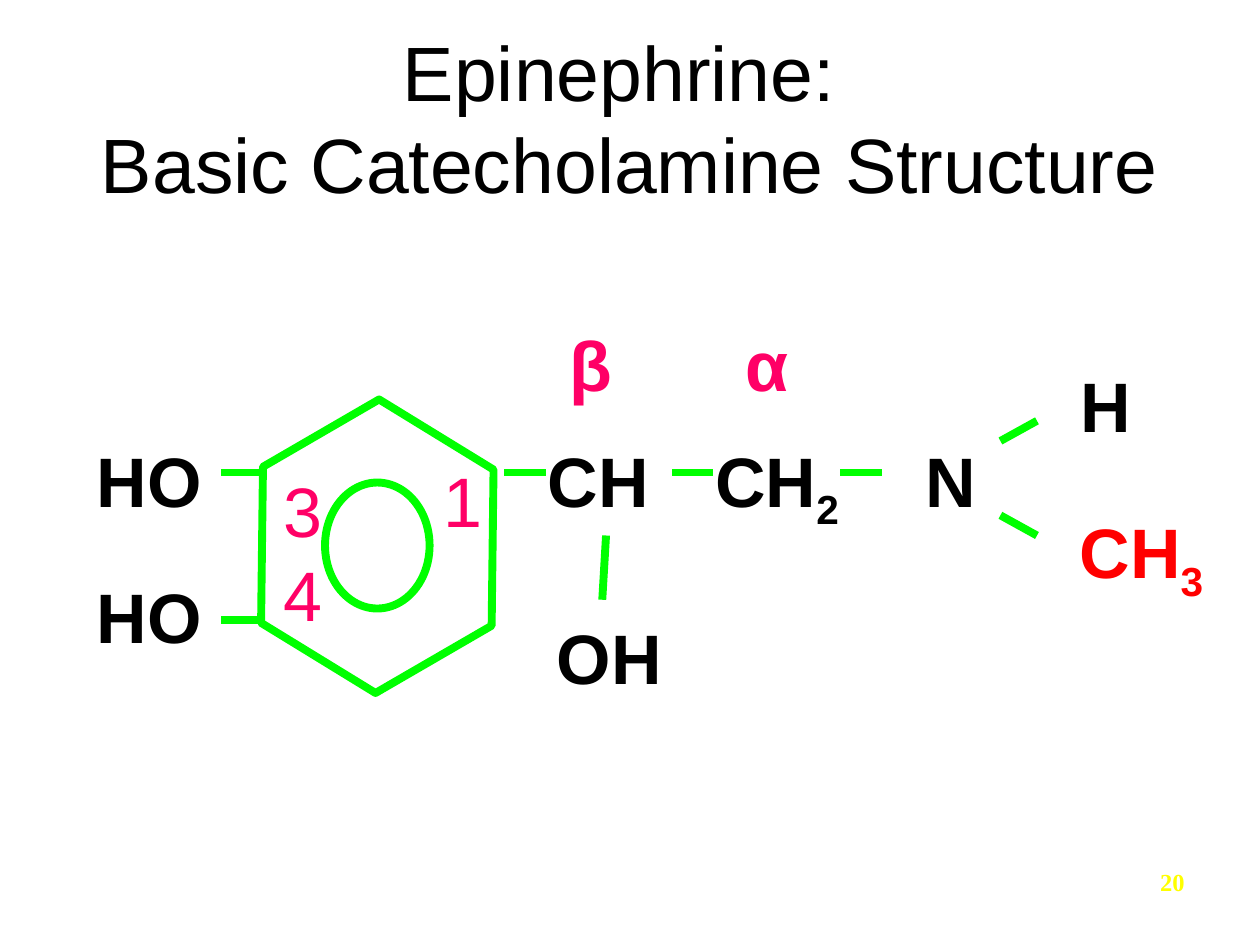
from pptx import Presentation
from pptx.dml.color import RGBColor
from pptx.enum import shapes, text
from pptx.oxml.ns import qn
from pptx.util import Inches, Pt
from lxml import etree

BLACK, RED, PINK, GREEN, YELLOW = "000000", "FF0000", "FF0066", "00FF00", "FFFF00"
ROW_Y, GREEK_Y, BOND_Y = 3.42, 2.5, 3.75
LABEL_H, BOND_W = 0.77, 0.33

TITLE = "Epinephrine: \vBasic Catecholamine Structure"
ATOMS = [
    ("HO", "", 0.67, ROW_Y, 1.03, BLACK),
    ("HO", "", 0.67, 4.5, 1.03, BLACK),
    ("CH", "", 4.25, ROW_Y, 1, BLACK),
    ("CH", "2", 5.58, ROW_Y, 1.21, BLACK),
    ("N", "", 7.25, ROW_Y, 0.6, BLACK),
    ("H", "", 8.48, 2.83, 0.6, BLACK),
    ("CH", "3", 8.47, 3.99, 1.22, RED),
    ("OH", "", 4.32, 4.83, 1.03, BLACK),
    ("β", "", 4.42, GREEK_Y, 0.51, PINK),
    ("α", "", 5.82, GREEK_Y, 0.56, PINK),
]
RING_NUMBERS = [("1", 3.42, 3.58), ("3", 2.15, 3.66), ("4", 2.15, 4.33)]
FLAT_BONDS = [(1.75, BOND_Y), (1.75, 4.92), (4, BOND_Y), (5.33, BOND_Y), (6.67, BOND_Y)]
SLANTED_BONDS = [
    (8.23, 3.34, 7.94, 3.5),
    (8.23, 4.25, 7.94, 4.09),
    (4.81, 4.25, 4.78, 4.76),
]
RING = [
    (shapes.MSO_SHAPE.HEXAGON, (1.83, 3.42, 2.33, 1.83), 270.7, (0.298, 1.155)),
    (shapes.MSO_SHAPE.OVAL, (2.58, 3.83, 0.83, 1), 0, ()),
]


def color(value):
    return RGBColor.from_string(value)


def add_text(s, box, runs, align=text.PP_ALIGN.LEFT, **frame):
    tf = s.shapes.add_textbox(*map(Inches, box)).text_frame
    for name, value in frame.items():
        setattr(tf, name, value)
    p = tf.paragraphs[0]
    p.alignment = align
    for content, fmt, hue, baseline in runs:
        p.add_run().text = content
        r = p.runs[-1]
        for name, value in fmt.items():
            setattr(r.font, name, value)
        r.font.color.rgb = color(hue)
        if baseline:
            r.font._element.set("baseline", str(baseline))


def add_label(s, content, subscript, x, y, w, hue, bold=True):
    fmt = {"name": "Arial", "size": Pt(40), "bold": bold}
    runs = [(content, fmt, hue, 0)]
    if subscript:
        runs.append((subscript, fmt, hue, -25000))
    add_text(s, (x, y, w, LABEL_H), runs, word_wrap=False,
             auto_size=text.MSO_AUTO_SIZE.SHAPE_TO_FIT_TEXT)


def style_line(shape):
    shape.line.color.rgb = color(GREEN)
    shape.line.width = Pt(4.5)


def add_bond(s, *ends):
    bond = s.shapes.add_connector(shapes.MSO_CONNECTOR.STRAIGHT, *map(Inches, ends))
    style_line(bond)
    etree.SubElement(bond._element.spPr, qn("a:effectLst"))


def add_ring_part(s, kind, box, rotation, adjustments):
    sp = s.shapes.add_shape(kind, *map(Inches, box))
    sp.rotation = rotation
    for i, value in enumerate(adjustments):
        sp.adjustments[i] = value
    sp.shadow.inherit = False
    sp.fill.background()
    style_line(sp)


def main():
    prs = Presentation()
    prs.slide_width, prs.slide_height = Inches(10), Inches(7.5)
    s = prs.slides.add_slide(prs.slide_layouts[6])

    number_format = {"name": "Times New Roman", "size": Pt(14), "bold": True}
    add_text(s, (7.17, 6.83, 2.33, 0.52), [("20", number_format, YELLOW, 0)],
             text.PP_ALIGN.RIGHT, word_wrap=True)

    title = s.shapes.add_textbox(*map(Inches, (0.5, 0.3, 9, 1.25)))
    tf = title.text_frame
    tf.word_wrap = True
    tf.vertical_anchor = text.MSO_ANCHOR.MIDDLE
    tf.text = TITLE
    p = tf.paragraphs[0]
    p.alignment = text.PP_ALIGN.CENTER
    for r in p.runs:
        r.font.name, r.font.size = "Arial", Pt(44)
        r.font.color.rgb = color(BLACK)

    for part in RING:
        add_ring_part(s, *part)
    for x, y in FLAT_BONDS:
        add_bond(s, x + BOND_W, y, x, y)
    for ends in SLANTED_BONDS:
        add_bond(s, *ends)
    for atom in ATOMS:
        add_label(s, *atom)
    for number, x, y in RING_NUMBERS:
        add_label(s, number, "", x, y, 0.51, PINK, bold=False)

    prs.save("out.pptx")


if __name__ == "__main__":
    main()
